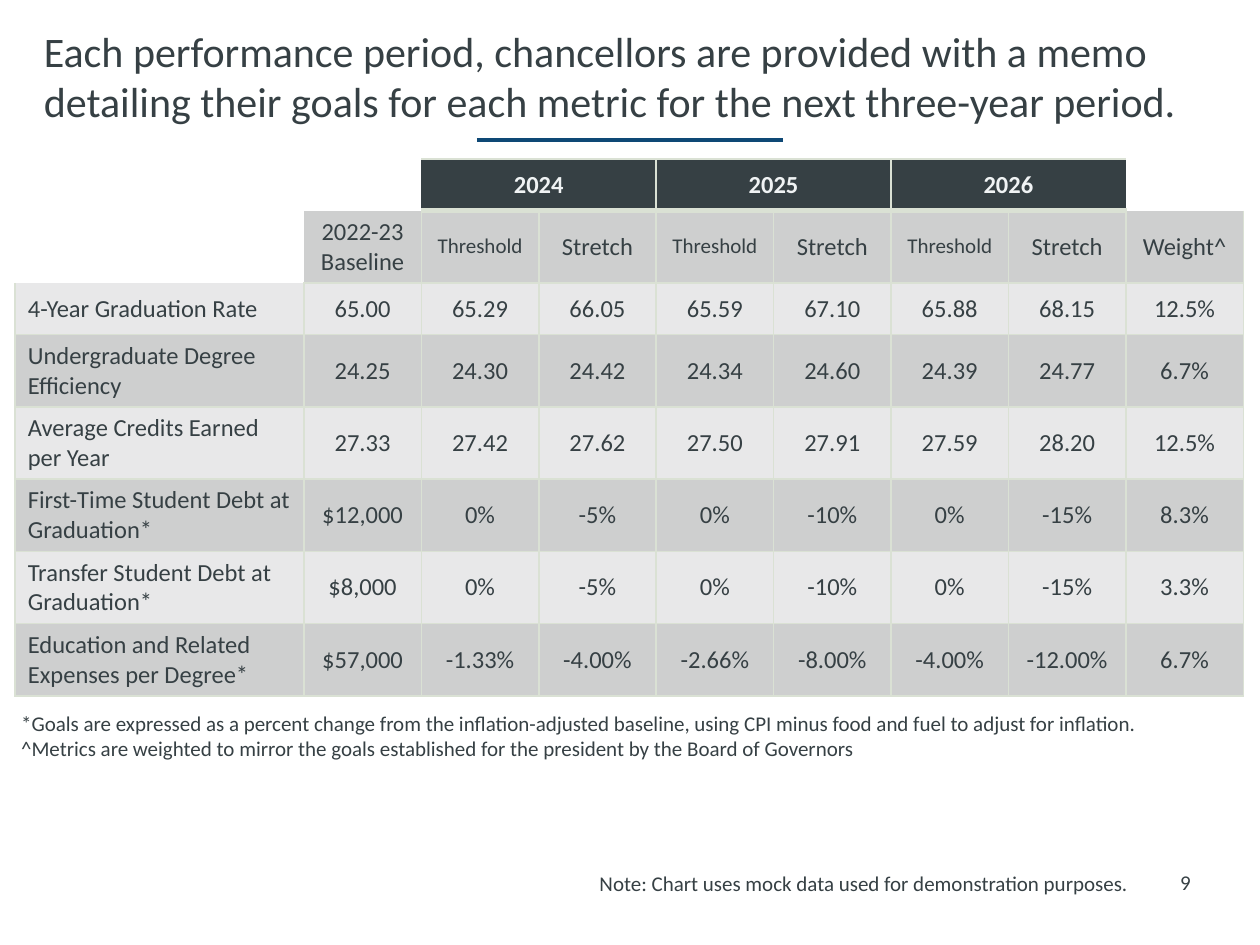
import pptx
import pptx.dml.color
import pptx.enum.shapes
import pptx.enum.text
import pptx.oxml
import pptx.oxml.ns
import pptx.util
import lxml.etree

Pt = pptx.util.Pt
PP_ALIGN = pptx.enum.text.PP_ALIGN
qn = pptx.oxml.ns.qn
INK, DARK, GRID = "364044", "364044", "DAE1D4"


def color(value):
    return pptx.dml.color.RGBColor.from_string(value)


def write(frame, lines, size, align=PP_ALIGN.LEFT, ink=INK, bold=False):
    frame.word_wrap = True
    for i, line in enumerate(lines):
        paragraph = frame.paragraphs[0] if i == 0 else frame.add_paragraph()
        paragraph.alignment = align
        run = paragraph.add_run()
        run.text = line
        run.font.name = "Calibri"
        run.font.size = Pt(size)
        run.font.bold = bold
        run.font.color.rgb = color(ink)


deck = pptx.Presentation()
deck.slide_width, deck.slide_height = Pt(720), Pt(540)
slide = deck.slides.add_slide(deck.slide_layouts[6])

title_rule = slide.shapes.add_connector(
    pptx.enum.shapes.MSO_CONNECTOR.STRAIGHT, Pt(272.5), Pt(80), Pt(447.5), Pt(80))
title_rule.line.color.rgb = color("0E4875")
title_rule.line.width = Pt(2)
lxml.etree.SubElement(title_rule._element.spPr, qn("a:effectLst"))

rows = [
    ["", "", "2024", "", "2025", "", "2026", "", ""],
    ["", "2022-23 Baseline"] + ["Threshold", "Stretch"] * 3 + ["Weight^"],
    ["4-Year Graduation Rate", "65.00", "65.29", "66.05", "65.59", "67.10", "65.88", "68.15", "12.5%"],
    ["Undergraduate Degree Efficiency", "24.25", "24.30", "24.42", "24.34", "24.60", "24.39", "24.77", "6.7%"],
    ["Average Credits Earned per Year", "27.33", "27.42", "27.62", "27.50", "27.91", "27.59", "28.20", "12.5%"],
    ["First-Time Student Debt at Graduation*", "$12,000", "0%", "-5%", "0%", "-10%", "0%", "-15%", "8.3%"],
    ["Transfer Student Debt at Graduation*", "$8,000", "0%", "-5%", "0%", "-10%", "0%", "-15%", "3.3%"],
    ["Education and Related Expenses per Degree*", "$57,000", "-1.33%", "-4.00%", "-2.66%", "-8.00%", "-4.00%",
     "-12.00%", "6.7%"],
]
goals = slide.shapes.add_table(8, 9, Pt(8.7), Pt(90.9), Pt(701.8), Pt(304)).table
for c, column in enumerate(goals.columns):
    column.width = Pt(165 if c == 0 else 67.1)
for r, row in enumerate(goals.rows):
    row.height = Pt(29.5 if r in (0, 2) else 41.2)
for c in (2, 4, 6):
    goals.cell(0, c).merge(goals.cell(0, c + 1))

for r, values in enumerate(rows):
    for c, value in enumerate(values):
        cell = goals.cell(r, c)
        cell.vertical_anchor = pptx.enum.text.MSO_ANCHOR.MIDDLE
        if 2 <= r <= 4 and 2 <= c <= 5:
            cell.margin_left = cell.margin_right = cell.margin_top = Pt(0.7)
            cell.margin_bottom = Pt(0)

        if r == 0:
            borders = {"R": c in (3, 5), "L": c in (4, 6), "T": 1, "B": 3} if 2 <= c <= 7 else {}
        elif r == 1:
            borders = {"L": c > 1, "R": 1, "T": 3 if 2 <= c <= 7 else 0, "B": 1} if c else {}
        else:
            borders = {"L": 1, "R": 1, "T": r > 2 or c > 0, "B": 1}
        properties = cell._tc.get_or_add_tcPr()
        for side in "LRTB":
            width = int(borders.get(side, 0))
            edge = lxml.etree.SubElement(properties, qn("a:ln" + side), w=str(Pt(width)))
            if width:
                paint = lxml.etree.SubElement(edge, qn("a:solidFill"))
                lxml.etree.SubElement(paint, qn("a:srgbClr"), val=GRID)
            else:
                lxml.etree.SubElement(edge, qn("a:noFill"))

        if borders:
            cell.fill.solid()
            cell.fill.fore_color.rgb = color(DARK if r == 0 else "CECFCF" if r % 2 else "E8E8E9")
        else:
            cell.fill.background()
        if value:
            write(cell.text_frame, [value], 12 if value == "Threshold" else 14,
                  PP_ALIGN.CENTER if c else PP_ALIGN.LEFT, "F0F3F4" if r == 0 else INK, r == 0)

page_number = slide.shapes.add_textbox(Pt(648), Pt(497), Pt(32.4), Pt(16)).text_frame
page_number.margin_left = page_number.margin_right = 0
page_number.margin_top = page_number.margin_bottom = 0
write(page_number, ["9"], 12, PP_ALIGN.RIGHT)

for left, top, width, height, size, lines in [
    (5, 402.5, 710, 36, 12, [
        "*Goals are expressed as a percent change from the inflation-adjusted baseline, "
        "using CPI minus food and fuel to adjust for inflation.",
        "^Metrics are weighted to mirror the goals established for the president by the Board of Governors"]),
    (18, 10.8, 684, 65.5, 24, [
        "Each performance period, chancellors are provided with a memo detailing their goals "
        "for each metric for the next three-year period."]),
    (335.5, 494, 345.6, 21.8, 12, ["Note: Chart uses mock data used for demonstration purposes."]),
]:
    box = slide.shapes.add_textbox(Pt(left), Pt(top), Pt(width), Pt(height))
    write(box.text_frame, lines, size)

deck.save("out.pptx")
